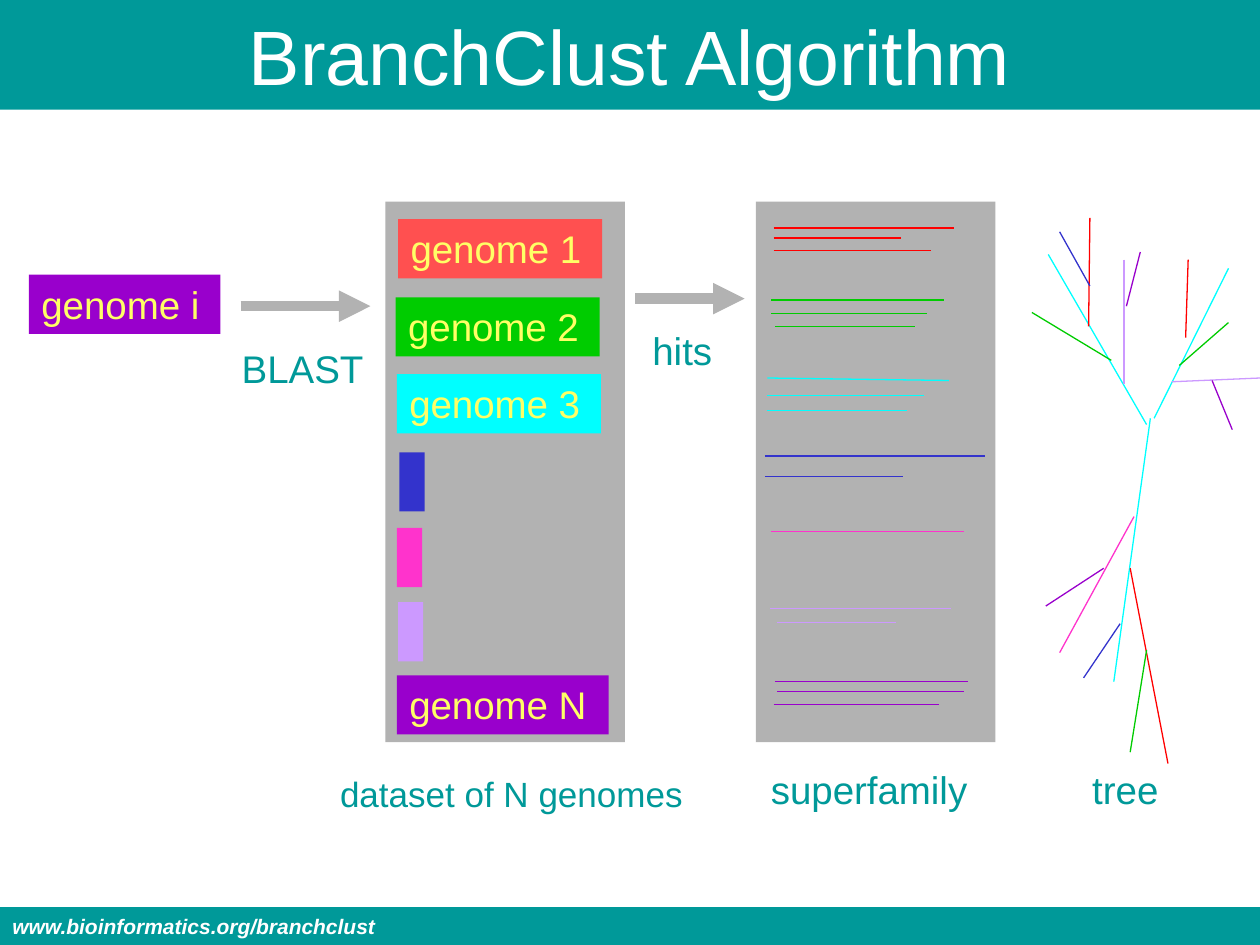
from lxml import etree
from pptx import Presentation
from pptx.dml.color import RGBColor
from pptx.enum.shapes import MSO_CONNECTOR, MSO_SHAPE
from pptx.enum.text import MSO_ANCHOR, MSO_AUTO_SIZE, PP_ALIGN
from pptx.oxml.ns import qn
from pptx.util import Inches, Pt

RECTANGLE = MSO_SHAPE.RECTANGLE
STRAIGHT = MSO_CONNECTOR.STRAIGHT
TOP, MIDDLE = MSO_ANCHOR.TOP, MSO_ANCHOR.MIDDLE
LEFT, CENTER = PP_ALIGN.LEFT, PP_ALIGN.CENTER
FIT_SHAPE, FIXED = MSO_AUTO_SIZE.SHAPE_TO_FIT_TEXT, MSO_AUTO_SIZE.NONE

COLUMNS, ROWS = 100, 75
WIDTH, HEIGHT = Inches(10), Inches(7.5)
LABEL_HEIGHT = 4.7

COLORS = {
    "teal": "009999", "gray": "B2B2B2", "white": "FFFFFF", "yellow": "FFFF66",
    "coral": "FF5050", "red": "FF0000", "green": "00CC00", "cyan": "00FFFF",
    "blue": "3333CC", "pink": "FF33CC", "lilac": "CC99FF", "purple": "9900CC",
}

GENOMES = [
    (31.6, 17.4, 16.2, "coral", "genome 1"),
    (31.4, 23.6, 16.2, "green", "genome 2"),
    (31.5, 29.7, 16.2, "cyan", "genome 3"),
    (31.7, 35.9, 2, "blue", None),
    (31.5, 41.9, 2, "pink", None),
    (31.6, 47.8, 2, "lilac", None),
    (31.5, 53.6, 16.8, "purple", "genome N"),
]

CAPTIONS = [
    (26, 60.8, 29.5, "dataset of N genomes", 20),
    (60.2, 60.3, 18.3, "superfamily", 22),
    (85.7, 60.3, 7.5, "tree", 22),
    (18.2, 26.9, 12.1, "BLAST", 22),
    (50.8, 25.5, 7, "hits", 22),
]

HITS = {
    "red": [(61.4, 75.7, 18.1), (61.4, 73.9, 19.9), (61.4, 71.5, 18.9)],
    "green": [(61.2, 74.9, 23.8), (61.2, 73.6, 24.9), (61.5, 72.6, 25.9)],
    "cyan": [(60.9, 75.3, 30, 30.2), (60.9, 73.3, 31.4), (60.9, 72, 32.6)],
    "blue": [(60.7, 78.2, 36.2), (60.7, 71.7, 37.8)],
    "pink": [(61.2, 76.5, 42.2)],
    "lilac": [(61.1, 75.5, 48.3), (61.7, 71.1, 49.4)],
    "purple": [(61.5, 76.8, 54.1), (61.7, 76.5, 54.9), (61.4, 74.5, 55.9)],
}

BRANCHES = {
    "cyan": [(97.5, 21.3, 91.6, 33.2), (91.3, 33.2, 88.4, 54.1),
             (91, 33.7, 83.2, 20.2)],
    "red": [(86.5, 17.3, 86.4, 25.9), (89.7, 45.1, 92.7, 60.6),
            (94.1, 26.8, 94.3, 20.6)],
    "green": [(81.9, 24.8, 88.2, 28.6), (93.6, 29, 97.5, 25.6),
              (91, 51.6, 89.7, 59.7)],
    "blue": [(84.1, 18.4, 86.5, 22.7), (88.9, 49.5, 86, 53.8)],
    "pink": [(90, 41, 84.1, 51.8)],
    "lilac": [(93, 30.3, 100, 30), (89.2, 20.6, 89.2, 30.5)],
    "purple": [(87.6, 45.1, 83, 48.1), (96.2, 30.2, 97.8, 34.1),
               (90.5, 20, 89.4, 24.3)],
}


def across(columns):
    return round(WIDTH * columns / COLUMNS)


def down(rows):
    return round(HEIGHT * rows / ROWS)


def rgb(color):
    return RGBColor.from_string(COLORS[color])


def write(host, text, size=22, color="teal", bold=False, italic=False,
          align=LEFT, anchor=TOP, wrap=False, fit=FIT_SHAPE):
    frame = host.text_frame
    frame.word_wrap = wrap
    frame.auto_size = fit
    frame.vertical_anchor = anchor
    paragraph = frame.paragraphs[0]
    paragraph.alignment = align
    run = paragraph.add_run()
    run.text = text
    run.font.name = "Arial"
    run.font.size = Pt(size)
    run.font.bold = bold
    run.font.italic = italic
    run.font.color.rgb = rgb(color)


def add_block(slide, left, top, width, height, color):
    block = slide.shapes.add_shape(
        RECTANGLE, across(left), down(top), across(width), down(height))
    block.shadow.inherit = False
    block.fill.solid()
    block.fill.fore_color.rgb = rgb(color)
    block.line.fill.background()
    return block


def add_genome(slide, left, top, width, color, name):
    genome = add_block(slide, left, top, width, LABEL_HEIGHT, color)
    if name:
        write(genome, name, color="yellow")


def add_caption(slide, left, top, width, text, size):
    caption = slide.shapes.add_textbox(
        across(left), down(top), across(width), down(LABEL_HEIGHT))
    write(caption, text, size=size)


def add_line(slide, x1, y1, x2, y2, color, weight=0.75):
    line = slide.shapes.add_connector(
        STRAIGHT, across(x1), down(y1), across(x2), down(y2))
    line.line.color.rgb = rgb(color)
    line.line.width = Pt(weight)
    etree.SubElement(line._element.spPr, qn("a:effectLst"))
    return line


def add_arrow(slide, start, end, row):
    arrow = add_line(slide, start, row, end, row, "gray", weight=6)
    outline = arrow.line._get_or_add_ln()
    etree.SubElement(outline, qn("a:tailEnd"), type="triangle")


def add_bars(slide):
    title = add_block(slide, 0, 0, COLUMNS, 8.7, "teal")
    write(title, "BranchClust Algorithm", size=44, color="white",
          align=CENTER, anchor=MIDDLE, wrap=True, fit=FIXED)
    footer = add_block(slide, 0, 72, COLUMNS, 3, "teal")
    write(footer, "www.bioinformatics.org/branchclust", size=12,
          color="white", bold=True, italic=True, wrap=True)


def main():
    deck = Presentation()
    deck.slide_width, deck.slide_height = WIDTH, HEIGHT
    slide = deck.slides.add_slide(deck.slide_layouts[6])

    add_bars(slide)
    for panel_left in (30.6, 60):
        add_block(slide, panel_left, 16, 19, 42.9, "gray")
    add_genome(slide, 2.3, 21.8, 15.2, "purple", "genome i")
    for genome in GENOMES:
        add_genome(slide, *genome)
    for caption in CAPTIONS:
        add_caption(slide, *caption)
    add_arrow(slide, 19.1, 29.4, 24.3)
    add_arrow(slide, 50.4, 59.1, 23.7)

    for color, hits in HITS.items():
        for start, end, *rows in hits:
            add_line(slide, start, rows[0], end, rows[-1], color)
    for color, branches in BRANCHES.items():
        for branch in branches:
            add_line(slide, *branch, color)

    deck.save("out.pptx")


if __name__ == "__main__":
    main()
